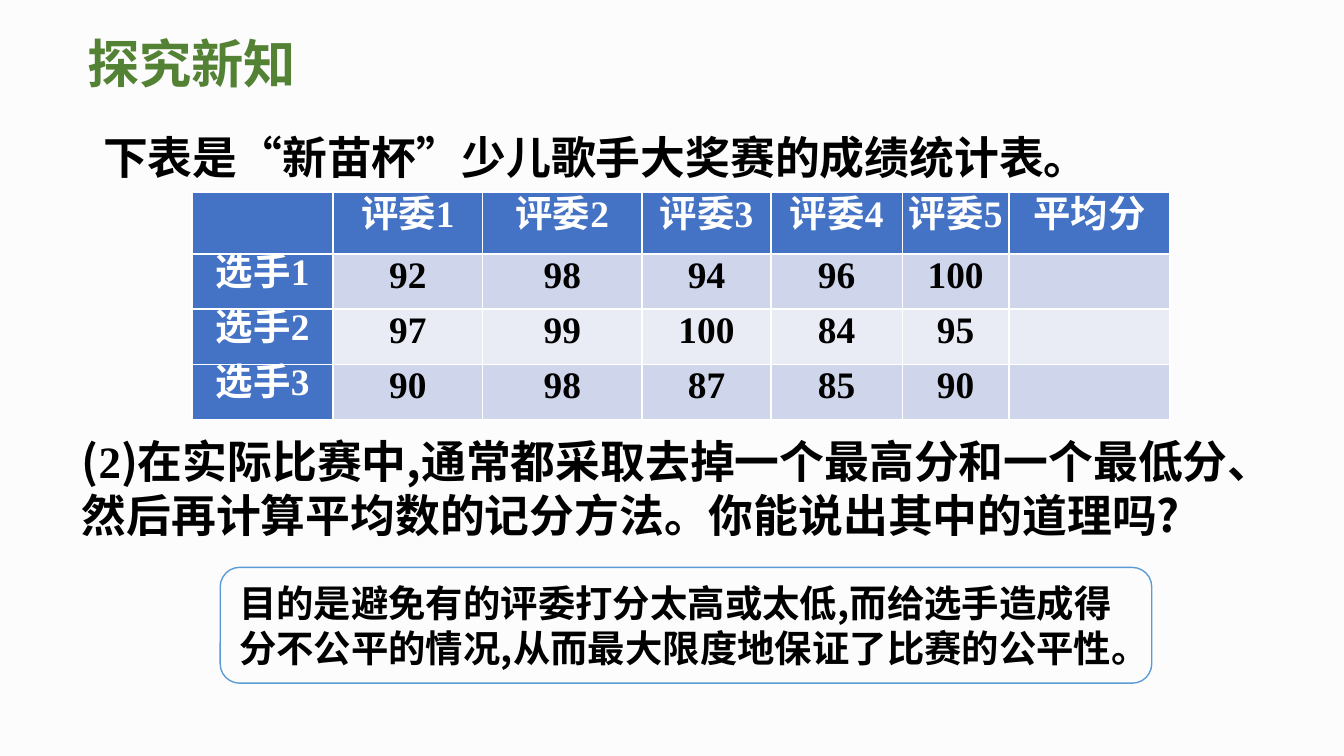
from dataclasses import dataclass
from itertools import groupby

from lxml import etree
from pptx import Presentation
from pptx.dml.color import RGBColor
from pptx.enum.lang import MSO_LANGUAGE_ID
from pptx.enum.shapes import MSO_SHAPE
from pptx.enum.text import MSO_ANCHOR, MSO_AUTO_SIZE, PP_ALIGN
from pptx.oxml.ns import qn
from pptx.util import Pt

ROUNDED = MSO_SHAPE.ROUNDED_RECTANGLE
MIDDLE = MSO_ANCHOR.MIDDLE
TOP = MSO_ANCHOR.TOP
LEFT = PP_ALIGN.LEFT
CENTER = PP_ALIGN.CENTER
NO_FIT = MSO_AUTO_SIZE.NONE
CHINESE = MSO_LANGUAGE_ID.SIMPLIFIED_CHINESE
TITLE_ONLY = 5


@dataclass(frozen=True)
class Theme:
    background: str = "FCFCFC"
    title: str = "548235"
    ink: str = "000000"
    header: str = "4472C4"
    header_ink: str = "FFFFFF"
    bands: tuple = ("CFD5EA", "E9EBF5")
    outline: str = "5B9BD5"
    text_font: str = "Noto Sans CJK SC"
    digit_font: str = "Times New Roman"
    title_size: int = 28
    body_size: int = 24
    small_size: int = 20
    cell_spacing: float = 15.6


THEME = Theme()
SCORES = [
    ["", "评委1", "评委2", "评委3", "评委4", "评委5", "平均分"],
    ["选手1", "92", "98", "94", "96", "100", ""],
    ["选手2", "97", "99", "100", "84", "95", ""],
    ["选手3", "90", "98", "87", "85", "90", ""],
]
COLUMN_WIDTHS = [75.5, 80, 85.5, 69, 70.5, 57, 86.5]
ROW_HEIGHTS = [33.2, 29.5, 29.5, 29.5]


def write(para, text, size, color, align=LEFT):
    """Fill a paragraph with bold text, setting its digits in the digit font."""
    para.alignment = align
    for is_digit, letters in groupby(text, str.isdigit):
        span = para.add_run()
        span.text = "".join(letters)
        font = span.font
        font.name = THEME.digit_font if is_digit else THEME.text_font
        font.size = Pt(size)
        font.bold = True
        font.color.rgb = RGBColor.from_string(color)
        font.language_id = CHINESE
        east_asian = etree.SubElement(span._r.get_or_add_rPr(), qn("a:ea"))
        east_asian.set("typeface", THEME.text_font)


def place(shape, box):
    shape.left, shape.top, shape.width, shape.height = map(Pt, box)


def fill_frame(shape, text, size, color, anchor=TOP):
    frame = shape.text_frame
    frame.word_wrap = True
    frame.auto_size = NO_FIT
    frame.vertical_anchor = anchor
    write(frame.paragraphs[0], text, size, color)


def add_title(page, box, text):
    place(page.shapes.title, box)
    fill_frame(page.shapes.title, text, THEME.title_size, THEME.title)


def add_body(page, box, text):
    body = page.shapes.add_textbox(*map(Pt, box))
    fill_frame(body, text, THEME.body_size, THEME.ink)


def add_answer(page, box, text):
    answer = page.shapes.add_shape(ROUNDED, *map(Pt, box))
    answer.shadow.inherit = False
    answer.fill.background()
    answer.line.color.rgb = RGBColor.from_string(THEME.outline)
    answer.line.width = Pt(0.75)
    fill_frame(answer, text, THEME.small_size, THEME.ink, MIDDLE)


def add_scores(page, left, top):
    size = sum(COLUMN_WIDTHS), sum(ROW_HEIGHTS)
    table = page.shapes.add_table(
        len(SCORES), len(COLUMN_WIDTHS), *map(Pt, (left, top, *size))).table
    table.first_col = True
    for column, width in zip(table.columns, COLUMN_WIDTHS):
        column.width = Pt(width)
    for row, height in zip(table.rows, ROW_HEIGHTS):
        row.height = Pt(height)
    for r, values in enumerate(SCORES):
        for c, value in enumerate(values):
            is_header = r == 0 or c == 0
            fill = THEME.header if is_header else THEME.bands[(r - 1) % 2]
            cell = table.cell(r, c)
            cell.fill.solid()
            cell.fill.fore_color.rgb = RGBColor.from_string(fill)
            cell.vertical_anchor = MIDDLE
            cell.margin_left = cell.margin_right = 0
            cell.margin_top = cell.margin_bottom = 0
            para = cell.text_frame.paragraphs[0]
            para.line_spacing = Pt(THEME.cell_spacing)
            ink = THEME.header_ink if is_header else THEME.ink
            write(para, value, THEME.small_size, ink, CENTER)


def main():
    deck = Presentation()
    deck.slide_width, deck.slide_height = Pt(720), Pt(405)
    page = deck.slides.add_slide(deck.slide_layouts[TITLE_ONLY])
    page.background.fill.solid()
    page.background.fill.fore_color.rgb = RGBColor.from_string(THEME.background)
    add_title(page, (39.6, 13, 134, 41), "探究新知")
    add_body(page, (48.2, 66.2, 623.5, 36),
             "下表是“新苗杯”少儿歌手大奖赛的成绩统计表。")
    add_scores(page, 103, 103)
    add_body(page, (36.7, 229, 657.4, 65.5),
             "(2)在实际比赛中,通常都采取去掉一个最高分和一个最低分、"
             "然后再计算平均数的记分方法。你能说出其中的道理吗?")
    add_answer(page, (118, 304, 499, 62),
               "目的是避免有的评委打分太高或太低,而给选手造成得"
               "分不公平的情况,从而最大限度地保证了比赛的公平性。")
    deck.save("out.pptx")


if __name__ == "__main__":
    main()
